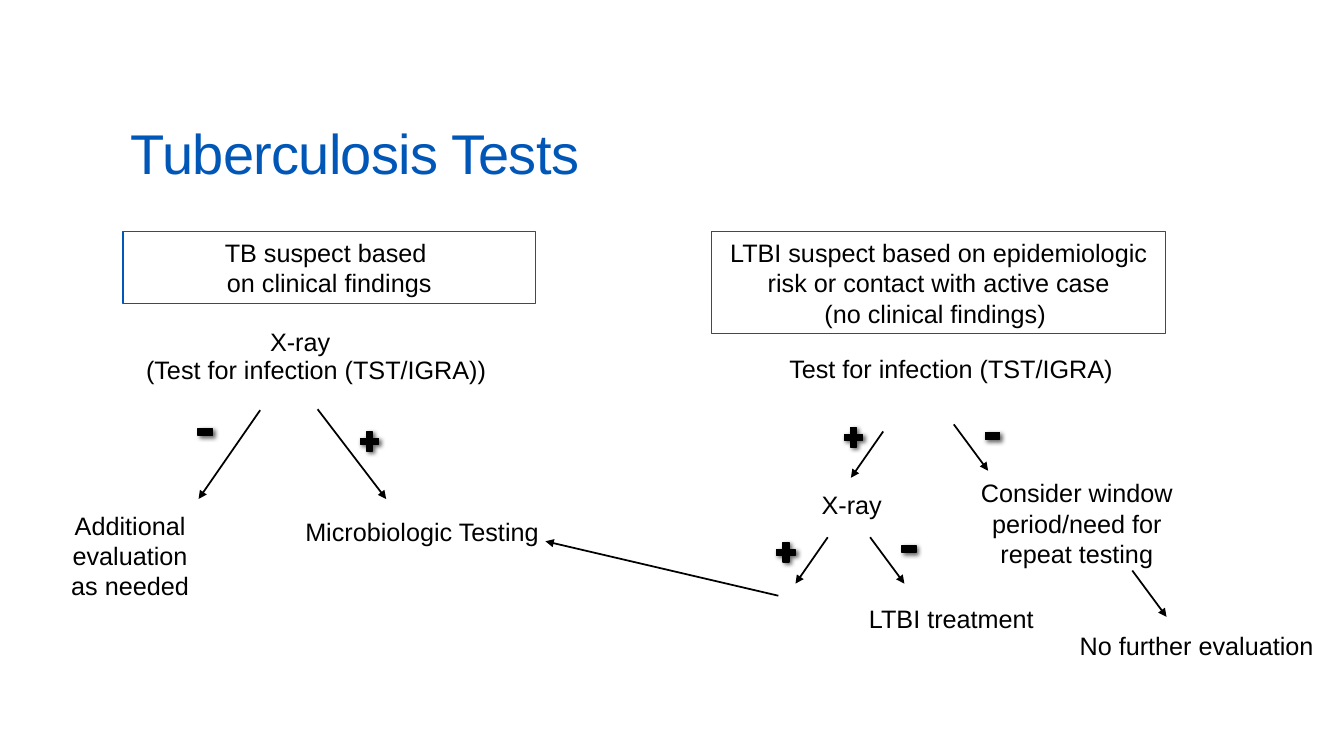
from dataclasses import dataclass

from lxml import etree
from pptx import Presentation
from pptx import util as u
from pptx.dml.color import RGBColor
from pptx.enum import shapes, text
from pptx.oxml import parse_xml
from pptx.oxml.ns import nsdecls, qn


@dataclass(frozen=True)
class Theme:
    """Colours, font and sizes of the slide."""
    accent: RGBColor = RGBColor(0x00, 0x57, 0xB8)
    ink: RGBColor = RGBColor(0, 0, 0)
    font: str = "Arial"
    title: int = 40
    body: int = 18
    frame: float = 0.75
    arrow: float = 1.25
    sign: float = 1


class Flowchart:
    """Draws flowchart elements on a grid of tenth-inch columns and rows."""

    def __init__(self, slide, theme):
        self.slide = slide
        self.theme = theme

    def grid(self, *cells):
        """Turn columns and rows into lengths."""
        return [u.Inches(cell / 10) for cell in cells]

    def add_lines(self, frame, lines, size, color, align):
        """Fill a text frame with one paragraph per line."""
        for number, line in enumerate(lines):
            paragraph = frame.paragraphs[0] if number == 0 else frame.add_paragraph()
            paragraph.alignment = align
            run = paragraph.add_run()
            run.text = line
            run.font.name = self.theme.font
            run.font.size = u.Pt(size)
            run.font.color.rgb = color

    def title(self, area, wording):
        """Add the slide title."""
        frame = self.slide.shapes.add_textbox(*self.grid(*area)).text_frame
        frame.word_wrap = True
        frame.vertical_anchor = text.MSO_ANCHOR.BOTTOM
        self.add_lines(frame, [wording], self.theme.title, self.theme.accent, text.PP_ALIGN.LEFT)
        heading = frame.paragraphs[0]
        heading.line_spacing = 0.9
        heading.runs[0].font._element.set("spc", "-50")

    def start(self, area, *lines):
        """Add a framed starting point."""
        box = self.slide.shapes.add_shape(shapes.MSO_SHAPE.RECTANGLE, *self.grid(*area))
        box.shadow.inherit = False
        box.fill.background()
        box.line.color.rgb = self.theme.accent
        box.line.width = u.Pt(self.theme.frame)
        box.text_frame.word_wrap = True
        self.add_lines(box.text_frame, lines, self.theme.body, self.theme.ink, text.PP_ALIGN.CENTER)

    def step(self, area, wording, wrap=False):
        """Add a step, centred when it wraps."""
        frame = self.slide.shapes.add_textbox(*self.grid(*area)).text_frame
        frame.word_wrap = wrap
        align = text.PP_ALIGN.CENTER if wrap else text.PP_ALIGN.LEFT
        self.add_lines(frame, [wording], self.theme.body, self.theme.ink, align)

    def arrow(self, *ends):
        """Add an arrow from one grid point to another."""
        arrow = self.slide.shapes.add_connector(shapes.MSO_CONNECTOR.STRAIGHT, *self.grid(*ends))
        arrow.line.color.rgb = self.theme.ink
        arrow.line.width = u.Pt(self.theme.arrow)
        properties = arrow._element.spPr
        etree.SubElement(properties.find(qn("a:ln")), qn("a:tailEnd"), type="triangle")
        etree.SubElement(properties, qn("a:effectLst"))

    def sign(self, column, row, positive):
        """Add a plus or minus result sign with a soft shadow."""
        kind = shapes.MSO_SHAPE.MATH_PLUS if positive else shapes.MSO_SHAPE.MATH_MINUS
        size = (2.5, 2.6) if positive else (1.9, 2.9)
        sign = self.slide.shapes.add_shape(kind, *self.grid(column, row, *size))
        sign.fill.solid()
        sign.fill.fore_color.rgb = self.theme.ink
        sign.line.color.rgb = self.theme.ink
        sign.line.width = u.Pt(self.theme.sign)
        sign._element.spPr.append(parse_xml(
            f'<a:effectLst {nsdecls("a")}><a:outerShdw blurRad="{u.Pt(3)}" dist="{u.Pt(2)}" '
            f'dir="2700000" rotWithShape="0"><a:srgbClr val="{self.theme.ink}">'
            '<a:alpha val="60000"/></a:srgbClr></a:outerShdw></a:effectLst>'))


def main():
    """Build the tuberculosis testing slide."""
    deck = Presentation()
    deck.slide_width, deck.slide_height = u.Inches(13.33), u.Inches(7.5)
    chart = Flowchart(deck.slides.add_slide(deck.slide_layouts[6]), Theme())

    chart.title((12, 3.1, 110, 15.9), "Tuberculosis Tests")
    chart.start((12.2, 23, 40.9, 7.1), "TB suspect based ", "on clinical findings")
    chart.start((70.6, 23, 45, 10.1),
                "LTBI suspect based on epidemiologic risk or contact with active case",
                "(no clinical findings) ")

    line_height = 4
    for column, row, width, wording in (
        (25.8, 31.9, 8.1, "X-ray"),
        (13.5, 34.7, 36.1, "(Test for infection (TST/IGRA))"),
        (29.3, 50.7, 25.4, "Microbiologic Testing"),
        (77.3, 34.6, 34.4, "Test for infection (TST/IGRA)"),
        (80.5, 48.1, 8.1, "X-ray"),
        (85.2, 59.4, 18.5, "LTBI treatment"),
        (106.1, 62, 25.4, "No further evaluation"),
    ):
        chart.step((column, row, width, line_height), wording)
    chart.step((5, 50.1, 15.8, 10.3), "Additional evaluation as needed", wrap=True)
    chart.step((94.6, 46.9, 24.4, 10.1), "Consider window period/need for repeat testing", wrap=True)

    short_drop = 4.6
    for column, row, shift in (
        (87.6, 42.8, -3.2), (94.6, 42.1, 3.4),
        (82.1, 53.3, -3.2), (86.3, 53.3, 3.4), (112.3, 56.6, 3.4),
    ):
        chart.arrow(column, row, column + shift, row + short_drop)
    chart.arrow(25.8, 40.7, 19.7, 49.5)
    chart.arrow(31.5, 40.6, 38.3, 49.5)
    chart.arrow(77.2, 59.1, 54.1, 53.7)

    for column, row in ((35.4, 42.5), (83.4, 42.1), (76.7, 53.5)):
        chart.sign(column, row, positive=True)
    for column, row in ((19.4, 41.4), (97.5, 41.8), (89.2, 53)):
        chart.sign(column, row, positive=False)

    deck.save("out.pptx")


if __name__ == "__main__":
    main()
